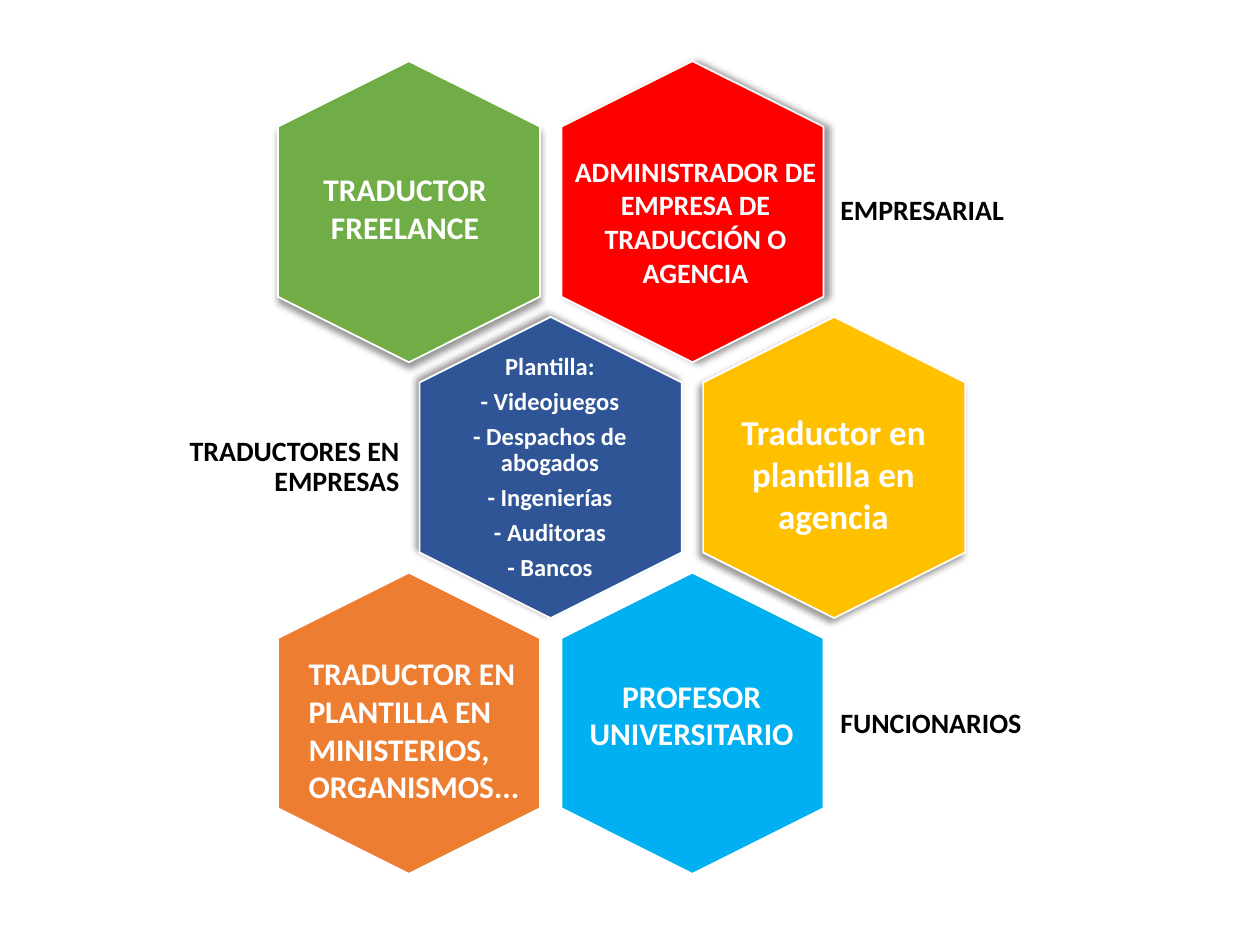
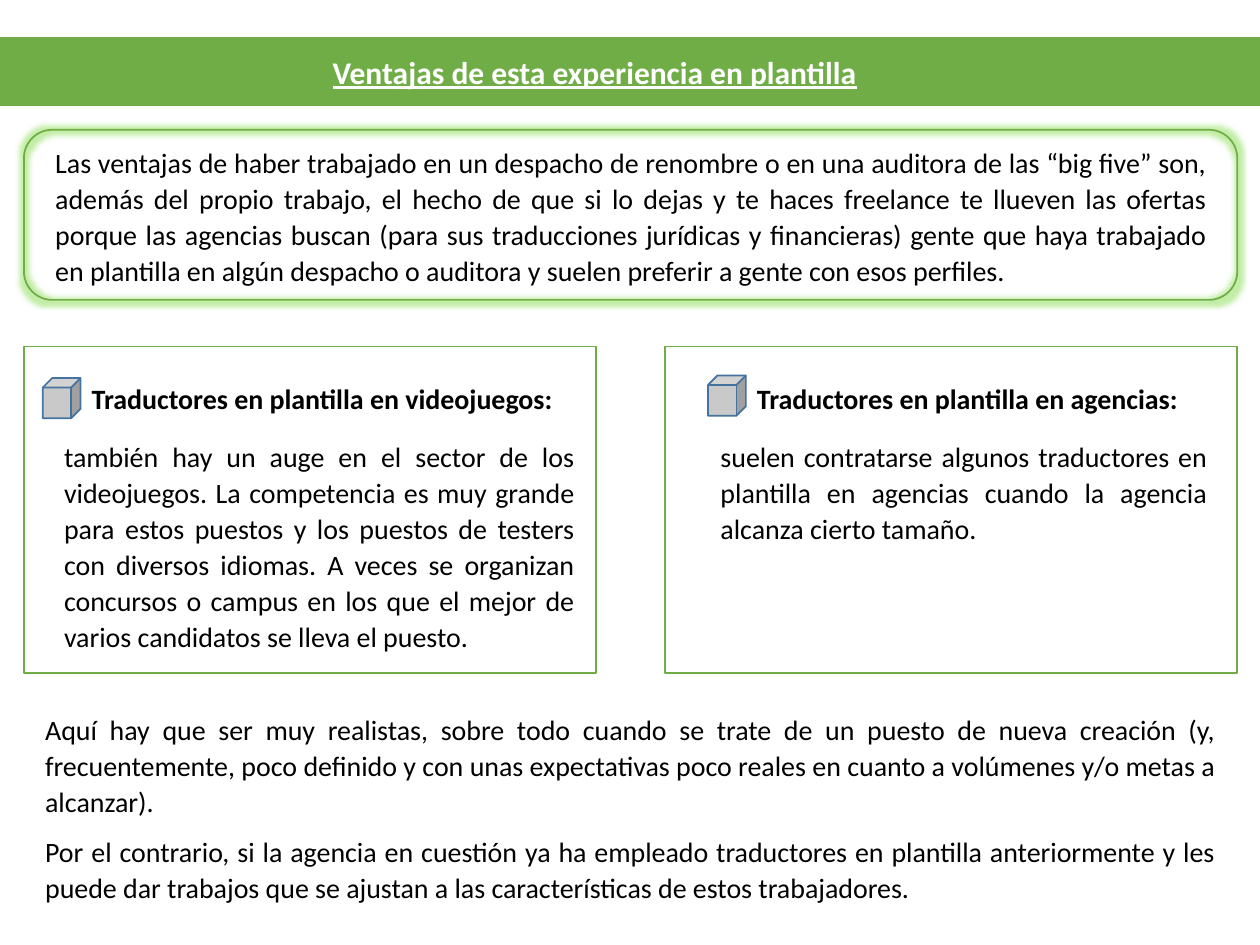
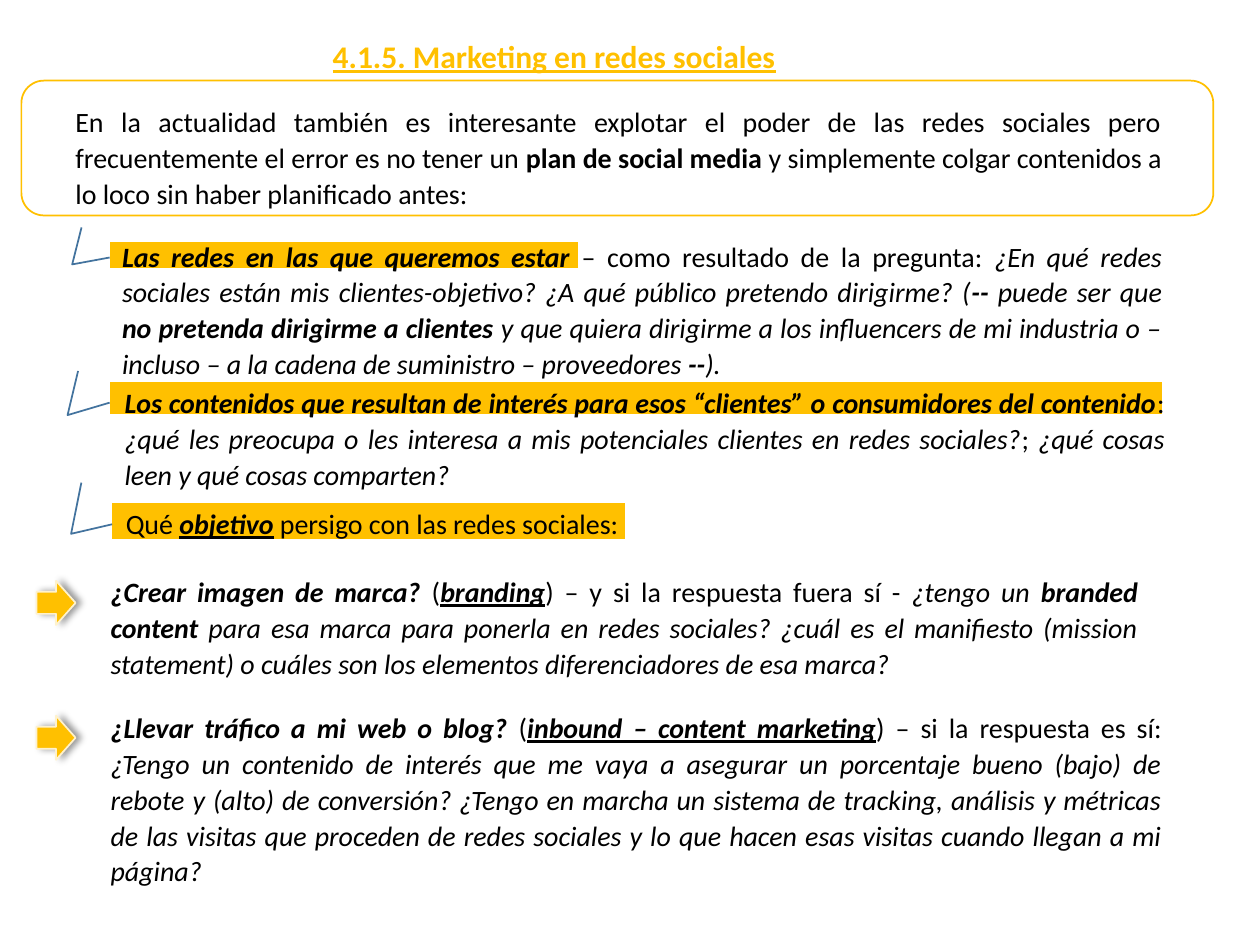
"""Build three slides on careers in translation and social media marketing."""
from dataclasses import dataclass, field, replace
from typing import Any, NamedTuple

from lxml.etree import SubElement
from pptx import Presentation
from pptx.dml.color import RGBColor
from pptx.enum.shapes import MSO_SHAPE
from pptx.enum.text import MSO_ANCHOR, MSO_AUTO_SIZE, PP_ALIGN
from pptx.oxml.ns import qn
from pptx.util import Inches, Pt


@dataclass(frozen=True)
class Theme:
    font: str = "Calibri"
    black: str = "000000"
    white: str = "FFFFFF"
    green: str = "70AD47"
    glow: str = "68D321"
    red: str = "FF0000"
    navy: str = "2F5597"
    gold: str = "FFC000"
    cream: str = "FFF2CC"
    sky: str = "00B0F0"
    orange: str = "ED7D31"
    grey: str = "C9C9C9"
    steel: str = "43739E"
    list_size: int = 14
    body_size: int = 16
    title_size: int = 18
    large_size: int = 20


THEME = Theme()


class Area(NamedTuple):
    left: float
    top: float
    width: float
    height: float

    def lengths(self) -> list[int]:
        return [Inches(value) for value in self]


class Run(NamedTuple):
    text: str
    marks: str = ""


@dataclass(frozen=True)
class TextStyle:
    size: int = THEME.body_size
    color: str = THEME.black
    marks: str = ""
    inset: float = 0
    frame: dict[str, Any] = field(default_factory=dict)
    paragraph: dict[str, Any] = field(default_factory=dict)


@dataclass(frozen=True)
class Passage:
    area: Area
    paragraphs: list[list[Run]]


@dataclass(frozen=True)
class Role:
    column: float
    row: int
    color: str
    shadow_angle: int | None
    caption: Passage
    style: TextStyle


@dataclass(frozen=True)
class Sector:
    left: float
    cube: Area
    heading: Passage
    detail: Passage


@dataclass(frozen=True)
class Network:
    highlight: Area
    pointer: tuple[float, ...]
    passage: Passage
    style: TextStyle


GROWING = {"auto_size": MSO_AUTO_SIZE.SHAPE_TO_FIT_TEXT, "word_wrap": True,
           "vertical_anchor": MSO_ANCHOR.TOP}
ONE_LINE = {**GROWING, "word_wrap": False}
FIXED = {"auto_size": MSO_AUTO_SIZE.NONE, "word_wrap": True}
LOW = {**FIXED, "vertical_anchor": MSO_ANCHOR.BOTTOM}
MIDDLE = {**FIXED, "vertical_anchor": MSO_ANCHOR.MIDDLE}
SPACED = {"line_spacing": 1.07, "space_after": Pt(8), "alignment": PP_ALIGN.LEFT}
TIGHT = {"line_spacing": 0.9, "space_after": Pt(4.9)}

BODY = TextStyle(frame=GROWING, paragraph={**SPACED, "alignment": PP_ALIGN.JUSTIFY})
SHORT = TextStyle(frame=ONE_LINE, paragraph=SPACED)
HEADING = TextStyle(marks="b", frame=ONE_LINE)
TITLE = TextStyle(THEME.title_size, THEME.white, "bu", frame=ONE_LINE, paragraph=SPACED)
CENTRED = TextStyle(THEME.title_size, THEME.white, "b", frame=LOW,
                    paragraph={"alignment": PP_ALIGN.CENTER})
STAFF = TextStyle(THEME.list_size, THEME.white, "b", 0.06, MIDDLE,
                  {**TIGHT, "alignment": PP_ALIGN.CENTER})
GROUP = TextStyle(marks="b", inset=0.07, frame=MIDDLE,
                  paragraph={**TIGHT, "alignment": PP_ALIGN.LEFT})


def apply(target: Any, formats: dict[str, Any]) -> None:
    for name, value in formats.items():
        setattr(target, name, value)


def passage(area: Area, *lines: str) -> Passage:
    return Passage(area, [[Run(line)] for line in lines])


def write(frame: Any, paragraphs: list[list[Run]], style: TextStyle) -> None:
    apply(frame, style.frame)
    if style.inset:
        sides = ("left", "top", "right", "bottom")
        apply(frame, {f"margin_{side}": Inches(style.inset) for side in sides})
    for index, runs in enumerate(paragraphs):
        paragraph = frame.add_paragraph() if index else frame.paragraphs[0]
        apply(paragraph, style.paragraph)
        for words, marks in runs:
            run = paragraph.add_run()
            run.text = words
            marks += style.marks
            apply(run.font, {"name": THEME.font, "size": Pt(style.size), "bold": "b" in marks,
                             "italic": "i" in marks, "underline": "u" in marks})
            run.font.color.rgb = RGBColor.from_string(style.color)


def add_text(slide: Any, text: Passage, style: TextStyle) -> None:
    box = slide.shapes.add_textbox(*text.area.lengths())
    write(box.text_frame, text.paragraphs, style)


def add_title(slide: Any, text: Passage, style: TextStyle) -> None:
    title = slide.shapes.title
    apply(title, dict(zip(("left", "top", "width", "height"), text.area.lengths())))
    write(title.text_frame, text.paragraphs, style)
    title.element.getparent().append(title.element)


def add_shape(slide: Any, kind: MSO_SHAPE, area: Area, fill: str | None = None,
              line: str | None = None) -> Any:
    shape = slide.shapes.add_shape(kind, *area.lengths())
    shape.shadow.inherit = False
    if fill:
        shape.fill.solid()
        shape.fill.fore_color.rgb = RGBColor.from_string(fill)
    else:
        shape.fill.background()
    if line:
        shape.line.color.rgb = RGBColor.from_string(line)
        shape.line.width = Pt(1)
    else:
        shape.line.fill.background()
    return shape


def add_effect(shape: Any, tag: str, color: str, **settings: int) -> None:
    effects = shape.element.spPr.find(qn("a:effectLst"))
    effect = SubElement(effects, qn(tag), {key: str(value) for key, value in settings.items()})
    tint = SubElement(effect, qn("a:srgbClr"), val=color)
    SubElement(tint, qn("a:alpha"), val="40000")


def add_shadow(shape: Any, angle: int) -> None:
    add_effect(shape, "a:outerShdw", THEME.black, blurRad=Pt(4), dist=Pt(3),
               dir=angle * 60000, rotWithShape=0)


ROLES = [
    Role(1, 0, THEME.red, 0,
         passage(Area(4.43, 1.16, 2.18, 1.18), "ADMINISTRADOR DE EMPRESA DE TRADUCCIÓN O AGENCIA"),
         replace(CENTRED, size=THEME.body_size)),
    Role(0, 0, THEME.green, 90,
         passage(Area(2.35, 0.99, 1.73, 1.01), "TRADUCTOR FREELANCE"), CENTRED),
    Role(0.5, 1, THEME.navy, 225,
         passage(Area(3.65, 2.89, 1.43, 1.65), "Plantilla:", "- Videojuegos",
                 "- Despachos de abogados", "- Ingenierías", "- Auditoras", "- Bancos"), STAFF),
    Role(1.5, 1, THEME.gold, 135,
         passage(Area(5.54, 2.86, 2.15, 1.45), "Traductor en plantilla en agencia"),
         replace(CENTRED, size=THEME.large_size)),
    Role(1, 2, THEME.sky, None,
         passage(Area(4.51, 5.31, 1.96, 0.71), "PROFESOR UNIVERSITARIO"), CENTRED),
    Role(0, 2, THEME.orange, None,
         passage(Area(2.35, 4.82, 2.08, 1.62),
                 "TRADUCTOR EN PLANTILLA EN MINISTERIOS, ORGANISMOS..."),
         replace(CENTRED, paragraph={"alignment": PP_ALIGN.LEFT})),
]

GROUPS = [
    (passage(Area(6.6, 0.96, 2.67, 1.44), "EMPRESARIAL"), GROUP),
    (passage(Area(0.65, 2.99, 2.59, 1.44), "TRADUCTORES EN EMPRESAS"),
     replace(GROUP, paragraph={**TIGHT, "alignment": PP_ALIGN.RIGHT})),
    (passage(Area(6.6, 5.03, 2.67, 1.44), "FUNCIONARIOS"), GROUP),
]

ADVANTAGES = passage(
    Area(0.34, 1.09, 9.34, 1.24),
    "Las ventajas de haber trabajado en un despacho de renombre o en una auditora de las "
    "“big five” son, además del propio trabajo, el hecho de que si lo dejas y te haces "
    "freelance te llueven las ofertas porque las agencias buscan (para sus traducciones "
    "jurídicas y financieras) gente que haya trabajado en plantilla en algún despacho o "
    "auditora y suelen preferir a gente con esos perfiles.")

SECTORS = [
    Sector(0.19, Area(0.34, 3, 0.3, 0.32),
           passage(Area(0.63, 2.98, 3.96, 0.37), "Traductores en plantilla en videojuegos:"),
           passage(Area(0.41, 3.42, 4.25, 1.82),
                   "también hay un auge en el sector de los videojuegos. La competencia es muy "
                   "grande para estos puestos y los puestos de testers con diversos idiomas. A "
                   "veces se organizan concursos o campus en los que el mejor de varios "
                   "candidatos se lleva el puesto.")),
    Sector(5.28, Area(5.62, 2.98, 0.3, 0.32),
           passage(Area(5.91, 2.98, 3.63, 0.37), "Traductores en plantilla en agencias:"),
           passage(Area(5.62, 3.42, 4.06, 0.95),
                   "suelen contratarse algunos traductores en plantilla en agencias cuando la "
                   "agencia alcanza cierto tamaño.")),
]

ADVICE = passage(
    Area(0.26, 5.59, 9.49, 1.65),
    "Aquí hay que ser muy realistas, sobre todo cuando se trate de un puesto de nueva creación "
    "(y, frecuentemente, poco definido y con unas expectativas poco reales en cuanto a volúmenes "
    "y/o metas a alcanzar).",
    "Por el contrario, si la agencia en cuestión ya ha empleado traductores en plantilla "
    "anteriormente y les puede dar trabajos que se ajustan a las características de estos "
    "trabajadores.")

MEDIA_PLAN = Passage(Area(0.5, 0.76, 8.82, 0.95), [[
    Run("En la actualidad también es interesante explotar el poder de las redes sociales pero "
        "frecuentemente el error es no tener un "),
    Run("plan de social media", "b"),
    Run(" y simplemente colgar contenidos a lo loco sin haber planificado antes:")]])

SHORT_POINTER = (0.59, 0, 0.85, -0.08, -0.55, -0.06)
LONG_POINTER = (0.64, 0, 1.02, -0.04, -0.33, -0.03)

NETWORKS = [
    Network(Area(0.87, 1.92, 3.72, 0.21), SHORT_POINTER, Passage(Area(0.87, 1.83, 8.45, 1.25), [[
        Run("Las redes en las que queremos estar", "bi"),
        Run(" – como resultado de la pregunta: "),
        Run("¿En qué redes sociales están mis clientes-objetivo? ¿A qué público pretendo "
            "dirigirme? (", "i"),
        Run("-- ", "bi"),
        Run("puede ser que ", "i"),
        Run("no pretenda dirigirme a clientes", "bi"),
        Run(" y que quiera dirigirme a los influencers de mi industria o – incluso – a la cadena "
            "de suministro – proveedores ", "i"),
        Run("--", "bi"),
        Run(").", "i")]]), BODY),
    Network(Area(0.87, 3.03, 8.35, 0.26), LONG_POINTER, Passage(Area(0.89, 2.99, 8.45, 0.95), [[
        Run("Los contenidos que resultan de interés para esos “clientes” o consumidores del "
            "contenido", "bi"),
        Run(": "),
        Run("¿qué les preocupa o les interesa a mis potenciales clientes en redes sociales?", "i"),
        Run("; "),
        Run("¿qué cosas leen y qué cosas comparten?", "i")]]), BODY),
    Network(Area(0.89, 3.99, 4.07, 0.29), SHORT_POINTER, Passage(Area(0.9, 3.95, 4.16, 0.38), [[
        Run("Qué "),
        Run("objetivo", "biu"),
        Run(" persigo con las redes sociales:")]]), SHORT),
]

GOALS = [
    (4.61, Passage(Area(0.78, 4.49, 8.35, 0.95), [[
        Run("¿Crear imagen de marca?", "bi"),
        Run(" ("),
        Run("branding", "biu"),
        Run(") – y si la respuesta fuera sí - "),
        Run("¿tengo un ", "i"),
        Run("branded content", "bi"),
        Run(" para esa marca para ponerla en redes sociales? ¿cuál es el manifiesto (mission "
            "statement) o cuáles son los elementos diferenciadores de esa marca?", "i")]])),
    (5.68, Passage(Area(0.78, 5.57, 8.54, 1.53), [[
        Run("¿Llevar tráfico a mi web o blog? ", "bi"),
        Run("("),
        Run("inbound – content marketing", "biu"),
        Run(") – si la respuesta es sí: "),
        Run("¿Tengo un contenido de interés que me vaya a asegurar un porcentaje bueno (bajo) de "
            "rebote y (alto) de conversión? ¿Tengo en marcha un sistema de tracking, análisis y "
            "métricas de las visitas que proceden de redes sociales y lo que hacen esas visitas "
            "cuando llegan a mi página?", "i")]])),
]


def build_roles(slide: Any) -> None:
    for role in ROLES:
        area = Area(2.05 + role.column * 2.25, 0.64 + role.row * 2.03, 2.39, 2.08)
        cell = add_shape(slide, MSO_SHAPE.HEXAGON, area, role.color, THEME.white)
        cell.rotation = 90
        if role.shadow_angle is not None:
            add_shadow(cell, role.shadow_angle)
    for role in ROLES:
        add_text(slide, role.caption, role.style)
    for group, style in GROUPS:
        add_text(slide, group, style)


def build_advantages(slide: Any) -> None:
    add_shape(slide, MSO_SHAPE.FLOWCHART_PROCESS, Area(0, 0.29, 10, 0.55), THEME.green)
    add_title(slide, passage(Area(2.54, 0.35, 4.39, 0.43),
                             "Ventajas de esta experiencia en plantilla"), TITLE)
    halo = add_shape(slide, MSO_SHAPE.FLOWCHART_ALTERNATE_PROCESS,
                     Area(0.19, 1.03, 9.63, 1.35), line=THEME.green)
    add_effect(halo, "a:glow", THEME.glow, rad=Pt(5))
    add_text(slide, ADVANTAGES, BODY)
    for sector in SECTORS:
        add_shape(slide, MSO_SHAPE.RECTANGLE, Area(sector.left, 2.75, 4.54, 2.59),
                  line=THEME.green)
        add_shape(slide, MSO_SHAPE.CUBE, sector.cube, THEME.grey, THEME.steel)
        add_text(slide, sector.heading, HEADING)
        add_text(slide, sector.detail, BODY)
    add_text(slide, ADVICE, BODY)


def build_marketing(slide: Any) -> None:
    add_title(slide, passage(Area(2.54, 0.22, 3.74, 0.43), "4.1.5. Marketing en redes sociales"),
              replace(TITLE, color=THEME.gold))
    add_shape(slide, MSO_SHAPE.ROUNDED_RECTANGLE, Area(0.17, 0.64, 9.46, 1.07), line=THEME.gold)
    add_text(slide, MEDIA_PLAN, BODY)
    for network in NETWORKS:
        highlight = add_shape(slide, MSO_SHAPE.LINE_CALLOUT_2_NO_BORDER, network.highlight,
                              THEME.gold, THEME.steel)
        for index, value in enumerate(network.pointer):
            highlight.adjustments[index] = value
    for network in NETWORKS:
        add_text(slide, network.passage, network.style)
    for arrow_top, goal in GOALS:
        arrow = add_shape(slide, MSO_SHAPE.RIGHT_ARROW, Area(0.29, arrow_top, 0.31, 0.35),
                          THEME.gold, THEME.cream)
        add_shadow(arrow, 0)
        add_text(slide, goal, BODY)


def main() -> None:
    deck = Presentation()
    apply(deck, {"slide_width": Inches(10), "slide_height": Inches(7.5)})
    title_only, blank = deck.slide_layouts[5], deck.slide_layouts[6]
    build_roles(deck.slides.add_slide(blank))
    build_advantages(deck.slides.add_slide(title_only))
    build_marketing(deck.slides.add_slide(title_only))
    deck.save("out.pptx")


if __name__ == "__main__":
    main()
